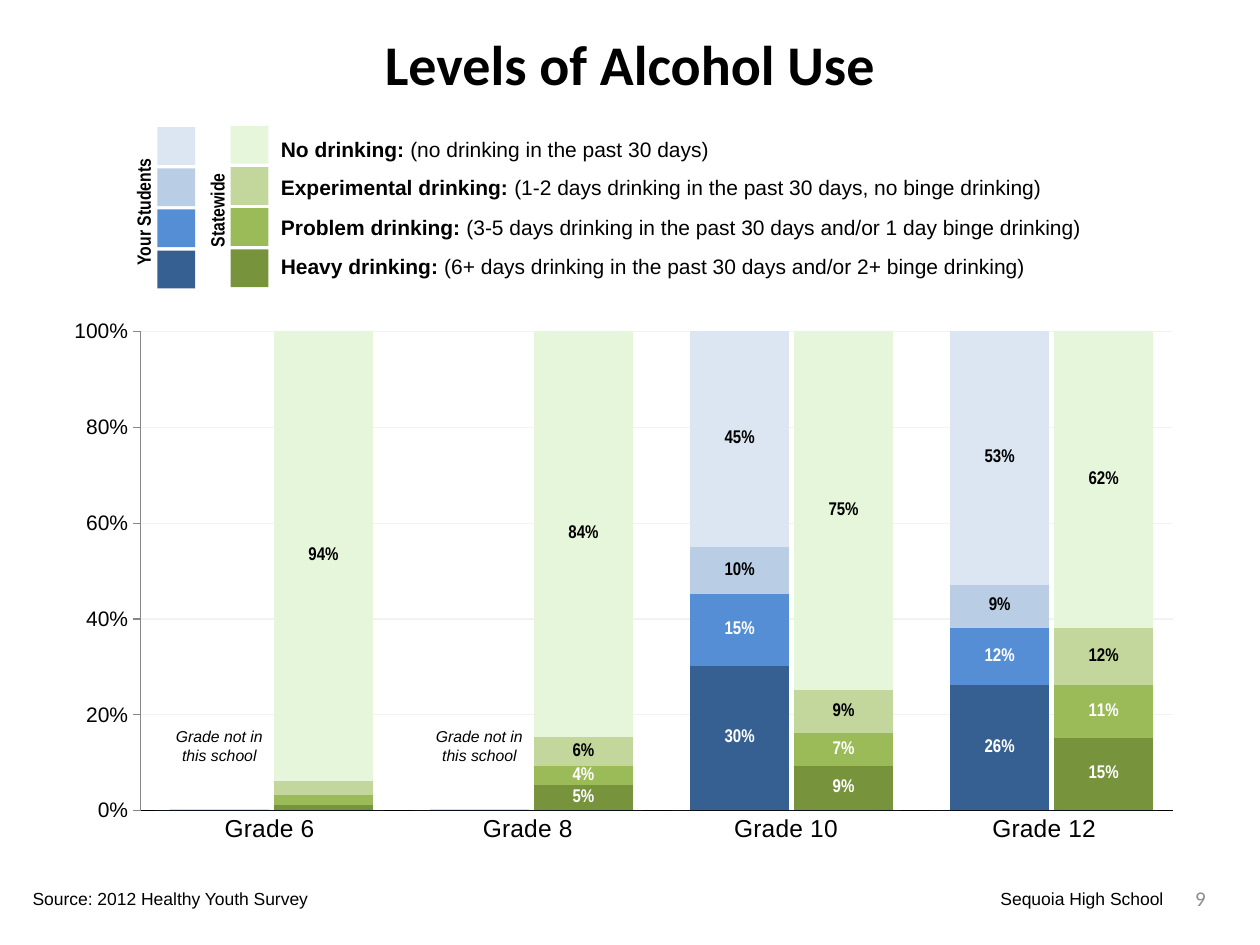
from lxml.etree import SubElement
from pptx import Presentation
from pptx.chart.data import CategoryChartData
from pptx.dml.color import RGBColor
from pptx.enum.chart import XL_CHART_TYPE, XL_LABEL_POSITION, XL_TICK_LABEL_POSITION, XL_TICK_MARK
from pptx.enum.shapes import MSO_SHAPE
from pptx.enum.text import MSO_ANCHOR, MSO_AUTO_SIZE, PP_ALIGN
from pptx.oxml import parse_xml
from pptx.oxml.ns import nsdecls, qn
from pptx.util import Pt

TITLE = "Levels of Alcohol Use"
# Level, meaning, student colour, statewide colour, label colour; top of the legend first
LEVELS = [
    ("No drinking: ", "(no drinking in the past 30 days)",
     "DCE6F2", "E6F6DA", "000000"),
    ("Experimental drinking: ", "(1-2 days drinking in the past 30 days, no binge drinking)",
     "B9CDE5", "C3D69B", "000000"),
    ("Problem drinking: ", "(3-5 days drinking in the past 30 days and/or 1 day binge drinking)",
     "558ED5", "9BBB59", "FFFFFF"),
    ("Heavy drinking: ", "(6+ days drinking in the past 30 days and/or 2+ binge drinking)",
     "376092", "77933C", "FFFFFF"),
]
LEGEND_WIDTHS = [261.4, 452.9, 475.9, 443.5]
# Statewide and student shares, in the order of LEVELS
GRADES = {
    "Grade 6": ((0.94, 0.03, 0.02, 0.01), (0, 0, 0, 0)),
    "Grade 8": ((0.84, 0.06, 0.04, 0.05), (0, 0, 0, 0)),
    "Grade 10": ((0.75, 0.09, 0.07, 0.09), (0.45, 0.10, 0.15, 0.30)),
    "Grade 12": ((0.62, 0.12, 0.11, 0.15), (0.53, 0.09, 0.12, 0.26)),
}
MISSING = "Grade not in this school"

THEME = {
    "body": "Arial", "narrow": "Arial Narrow", "head": "Calibri",
    "ink": "000000", "muted": "8C8C8C", "grid": "F2F2F2", "axis": "868686",
    "paper": "FFFFFF", "base": "4F81BD",
    "title": 32, "legend": 12, "side": 11, "label": 10.5, "category": 14,
    "scale": 12, "foot": 10, "note": 9,
}

SWATCH, SWATCH_PITCH, LEGEND_PITCH = 21.6, 23.5, 22.3
GROUP_LEFT, GROUP_PITCH, GROUP_TOP = 95.8, 148.6, 183.6


def color(value):
    return RGBColor.from_string(value)


def style_font(font, size, name=THEME["body"], ink=THEME["ink"], bold=False, italic=False):
    font.size, font.name, font.bold, font.italic = Pt(size), name, bold, italic
    font.color.rgb = color(ink)


def add_text(page, frame, spans, align=PP_ALIGN.LEFT, anchor=MSO_ANCHOR.TOP,
             wrap=False, grow=False, rotation=0, insets=None):
    """Spans are (text, font settings) pairs of one paragraph."""
    box = page.shapes.add_textbox(*map(Pt, frame))
    box.rotation = rotation
    text = box.text_frame
    text.word_wrap, text.vertical_anchor = wrap, anchor
    text.auto_size = MSO_AUTO_SIZE.SHAPE_TO_FIT_TEXT if grow else MSO_AUTO_SIZE.NONE
    if insets:
        text.margin_left, text.margin_top, text.margin_right, text.margin_bottom = map(Pt, insets)
    para = text.paragraphs[0]
    para.alignment = align
    for words, settings in spans:
        span = para.add_run()
        span.text = words
        style_font(span.font, **settings)


def add_stacked_chart(page, frame, categories, series, gap, inner, plot_fill=None):
    """Add a 100% column chart whose inner plot area is a (x, y, w, h) share of the frame."""
    data = CategoryChartData(number_format="0%")
    data.categories = categories
    for name, values in series:
        data.add_series(name, values)
    chart = page.shapes.add_chart(
        XL_CHART_TYPE.COLUMN_STACKED_100, *map(Pt, frame), data).chart
    chart.has_legend = chart.has_title = False
    style_font(chart.font, 10, THEME["head"])
    plot = chart.plots[0]
    plot.gap_width, plot.overlap, plot.vary_by_categories = gap, 100, False
    scale = chart.value_axis
    scale.minimum_scale, scale.maximum_scale, scale.major_unit = 0, 1, 0.2
    scale.has_major_gridlines = False
    scale.minor_tick_mark = chart.category_axis.minor_tick_mark = XL_TICK_MARK.NONE
    chart.category_axis.major_tick_mark = XL_TICK_MARK.NONE

    space = chart.element
    area = space.find(".//" + qn("c:plotArea"))
    for old in area.findall(qn("c:layout")):
        area.remove(old)
    layout = parse_xml(f"<c:layout {nsdecls('c')}/>")
    manual = SubElement(layout, qn("c:manualLayout"))
    settings = [("layoutTarget", "inner"), ("xMode", "edge"), ("yMode", "edge"),
                *zip("xywh", inner)]
    for tag, value in settings:
        SubElement(manual, qn("c:" + tag)).set("val", str(value))
    area.insert(0, layout)

    def surface(fill):
        paint = f'<a:solidFill><a:srgbClr val="{fill}"/></a:solidFill>' if fill else "<a:noFill/>"
        return parse_xml(f"<c:spPr {nsdecls('c', 'a')}>{paint}<a:ln><a:noFill/></a:ln></c:spPr>")

    area.append(surface(plot_fill))
    space.find(qn("c:chart")).addnext(surface(None))
    return chart


def add_axes_chart(page):
    chart = add_stacked_chart(
        page, (42.5, 180, 629.3, 309.6), list(GRADES), [("Series 1", [0] * len(GRADES))],
        13, (0.06, 0.031, 0.938, 0.884), THEME["paper"])
    fill = chart.plots[0].series[0].format.fill
    fill.solid()
    fill.fore_color.rgb = color(THEME["base"])
    scale, grades = chart.value_axis, chart.category_axis
    scale.has_major_gridlines = True
    scale.major_tick_mark = XL_TICK_MARK.OUTSIDE
    scale.tick_labels.number_format = "0%"
    scale.tick_labels.number_format_is_linked = False
    for line, ink, width in ((scale.major_gridlines.format.line, THEME["grid"], 0.75),
                             (scale.format.line, THEME["axis"], 0.75),
                             (grades.format.line, THEME["ink"], 1)):
        line.color.rgb, line.width = color(ink), Pt(width)
    style_font(scale.tick_labels.font, THEME["scale"])
    style_font(grades.tick_labels.font, THEME["category"])


def add_grade_chart(page, left, statewide, students):
    """Draw both columns of a grade; the reversed axis puts the students on the left."""
    stack = list(zip(LEVELS, statewide, students))[::-1]
    series = [(f"Series {n}", shares) for n, (_, *shares) in enumerate(stack, 1)]
    chart = add_stacked_chart(page, (left, GROUP_TOP, 118.8, 291.6), ["1", "2"],
                              series, 5, (0, 0.02, 1, 0.937))
    chart.category_axis.reverse_order = True
    for axis in (chart.category_axis, chart.value_axis):
        axis.tick_label_position = XL_TICK_LABEL_POSITION.NONE
        axis.major_tick_mark = XL_TICK_MARK.NONE
        axis.format.line.fill.background()
    for part, (level, *_) in zip(chart.plots[0].series, stack):
        _, _, student_color, state_color, label_color = level
        for target, ink in ((part, student_color), (part.points[0], state_color)):
            target.format.fill.solid()
            target.format.fill.fore_color.rgb = color(ink)
        labels = part.data_labels
        labels.show_value = True
        labels.number_format, labels.number_format_is_linked = '[<0.04]" ";0%', False
        labels.position = XL_LABEL_POSITION.CENTER
        style_font(labels.font, THEME["label"], THEME["narrow"], label_color, bold=True)


def add_legend(page):
    side = {"size": THEME["side"], "name": THEME["narrow"], "bold": True}
    columns = [("Your Students", (43.9, 110.2, 76.3, 20.9), 90, 72.7, 2),
               ("Statewide", (95.8, 109.4, 56.9, 20.9), 131.8, 72, 3)]
    for name, frame, left, top, shade in columns:
        add_text(page, frame, [(name, side)], grow=True, rotation=270)
        for row, level in enumerate(LEVELS):
            swatch = page.shapes.add_shape(
                MSO_SHAPE.RECTANGLE, Pt(left), Pt(top + row * SWATCH_PITCH), Pt(SWATCH), Pt(SWATCH))
            swatch.shadow.inherit = False
            swatch.fill.solid()
            swatch.fill.fore_color.rgb = color(level[shade])
            swatch.line.fill.background()
    for row, ((name, meaning, *_), width) in enumerate(zip(LEVELS, LEGEND_WIDTHS)):
        add_text(page, (153.4, 74.2 + row * LEGEND_PITCH, width, 21.6),
                 [(name, {"size": THEME["legend"], "bold": True}),
                  (meaning, {"size": THEME["legend"]})], grow=True)


def main():
    deck = Presentation()
    deck.slide_width, deck.slide_height = Pt(720), Pt(540)
    page = deck.slides.add_slide(deck.slide_layouts[6])
    add_text(page, (18, 12.2, 684, 48.2),
             [(TITLE, {"size": THEME["title"], "name": THEME["head"], "bold": True})],
             PP_ALIGN.CENTER, MSO_ANCHOR.MIDDLE, wrap=True)
    add_legend(page)
    add_axes_chart(page)
    for index, (statewide, students) in enumerate(GRADES.values()):
        left = GROUP_LEFT + index * GROUP_PITCH
        add_grade_chart(page, left, statewide, students)
        if not any(students):
            add_text(page, (left + 2.5, 336.2, 54, 108),
                     [(MISSING, {"size": THEME["note"], "italic": True})],
                     PP_ALIGN.CENTER, MSO_ANCHOR.BOTTOM, wrap=True, insets=(0, 0, 0, 7.2))
    foot = {"size": THEME["foot"]}
    add_text(page, (11.5, 504, 174.2, 19.4), [("Source: 2012 Healthy Youth Survey", foot)], grow=True)
    add_text(page, (234, 504, 437.8, 19.4), [("Sequoia High School", foot)], PP_ALIGN.RIGHT)
    add_text(page, (660.2, 499, 36, 28.8),
             [("9", {"size": 12, "name": THEME["head"], "ink": THEME["muted"]})],
             PP_ALIGN.RIGHT, MSO_ANCHOR.MIDDLE, wrap=True)
    deck.save("out.pptx")


if __name__ == "__main__":
    main()
